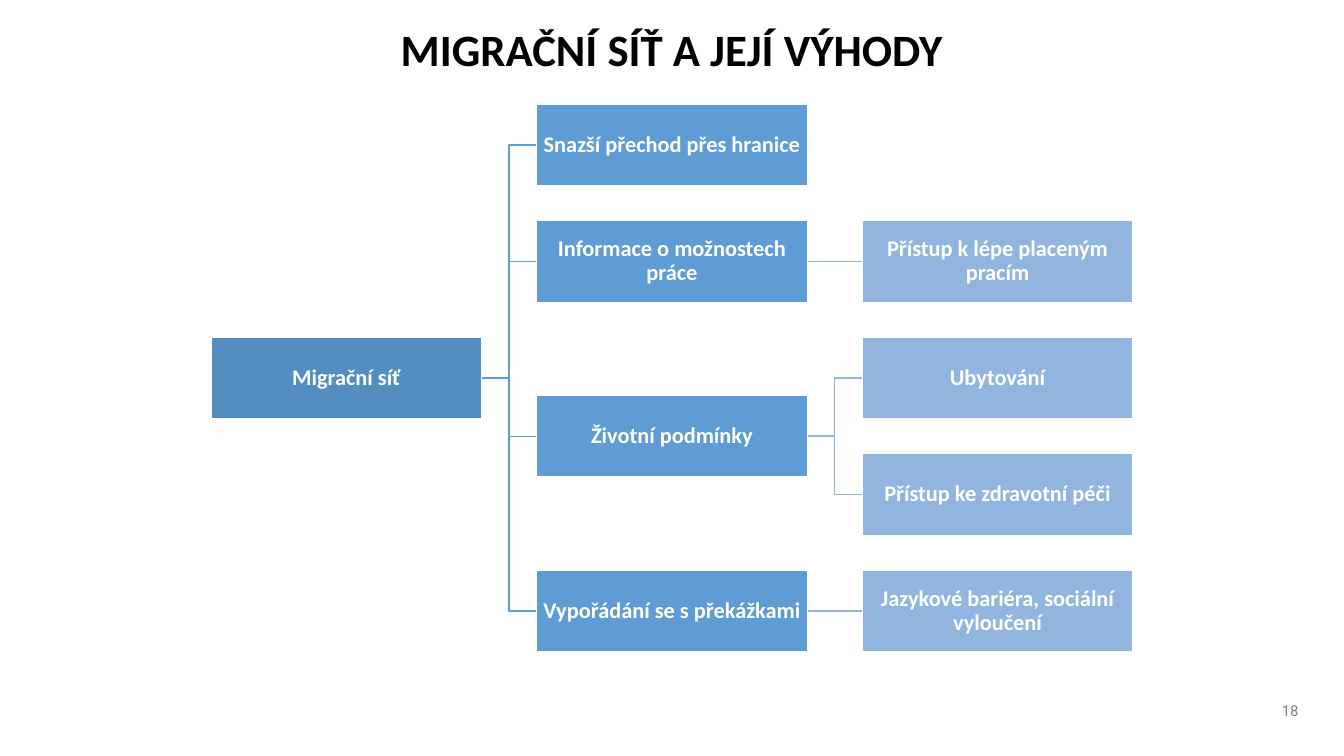
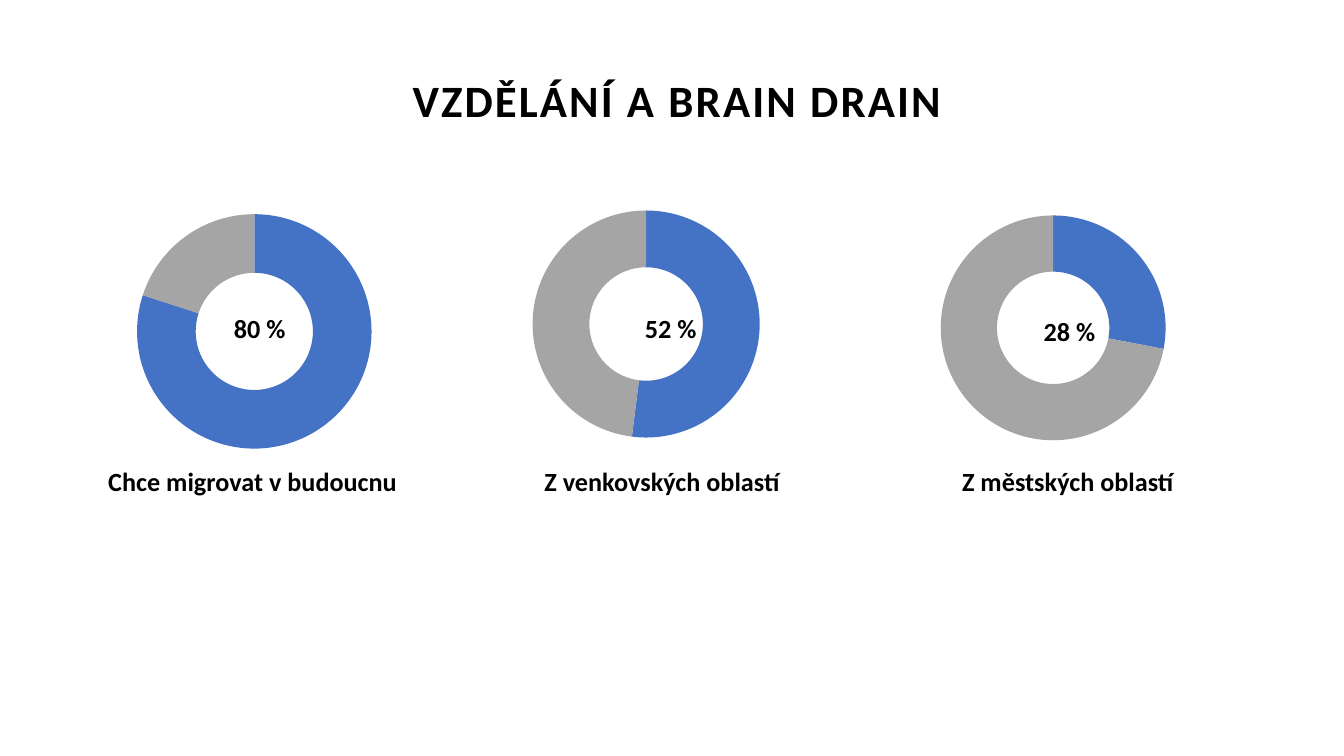
import collections

import lxml.etree
import pptx
import pptx.chart.data
import pptx.dml.color
import pptx.enum.chart
import pptx.enum.shapes
import pptx.enum.text
import pptx.oxml
import pptx.oxml.ns
import pptx.util

RGBColor = pptx.dml.color.RGBColor
BLACK = RGBColor(0x00, 0x00, 0x00)
WHITE = RGBColor(0xFF, 0xFF, 0xFF)
PAGE_GRAY = RGBColor(0x80, 0x80, 0x80)
ROOT_BLUE = RGBColor(0x53, 0x8D, 0xC1)
BRANCH_BLUE = RGBColor(0x5F, 0x9C, 0xD5)
LEAF_BLUE = RGBColor(0x91, 0xB5, 0xDE)
SHARE_BLUE = RGBColor(0x44, 0x72, 0xC4)
REST_GRAY = RGBColor(0xA5, 0xA5, 0xA5)

FONT = "Calibri"
NUMBER_FONT = "Roboto"
SHAPES = pptx.enum.shapes.MSO_SHAPE
CONNECTORS = pptx.enum.shapes.MSO_CONNECTOR
MIDDLE = pptx.enum.text.MSO_ANCHOR.MIDDLE
TOP = pptx.enum.text.MSO_ANCHOR.TOP
LEFT_SIDE, RIGHT_SIDE = 1, 3

Box = collections.namedtuple("Box", "left top width height")
Panel = collections.namedtuple("Panel", "percent caption chart plot label caption_box")

SLIDE = Box(0, 0, 13.33, 7.5)
TREE = Box(2.09, 1.03, 9.15, 5.44)
PANELS = Box(0.87, 1.66, 11.46, 3.32)
PANEL_GAP = 0.51

# Tree nodes: text, column, row, index of the parent
NODES = [
    ("Migrační síť", 0, 2, None),
    ("Snazší přechod přes hranice", 1, 0, 0),
    ("Informace o možnostech práce", 1, 1, 0),
    ("Životní podmínky", 1, 2.5, 0),
    ("Vypořádání se s překážkami", 1, 4, 0),
    ("Přístup k lépe placeným pracím", 2, 1, 2),
    ("Ubytování", 2, 2, 3),
    ("Přístup ke zdravotní péči", 2, 3, 3),
    ("Jazykové bariéra, sociální vyloučení", 2, 4, 4),
]
COLUMN_COLORS = [ROOT_BLUE, BRANCH_BLUE, LEAF_BLUE]

# Chart, label and caption are shares of the panel; plot is a share of the chart
PANEL_DATA = [
    Panel(80, "Chce migrovat v budoucnu", (0.10, 0.04, 0.75, 0.91),
          (0.05, 0.11, 0.90, 0.77), (0.31, 0.34, 0.36, 0.28), (0, 0.89, 0.94, 0.11)),
    Panel(52, "Z venkovských oblastí", (0.02, 0.04, 0.78, 0.84),
          (0.13, 0.08, 0.83, 0.86), (0.30, 0.34, 0.43, 0.28), (-0.01, 0.89, 1, 0.11)),
    Panel(28, "Z městských oblastí", (0.09, 0, 0.76, 0.96),
          (0.06, 0.15, 0.85, 0.70), (0.32, 0.35, 0.37, 0.28), (0, 0.89, 1, 0.11)),
]


def inside(box, left, top, width, height):
    """Return the part of a box that the shares describe."""
    return Box(box.left + left * box.width, box.top + top * box.height,
               width * box.width, height * box.height)


def inches(box):
    return [pptx.util.Inches(length) for length in box]


def write_text(shape, text, size=16, color=BLACK, bold=True, font=FONT, anchor=MIDDLE,
               margin=0, line_spacing=None, space_before=None, tracking=None):
    frame = shape.text_frame
    frame.word_wrap = True
    frame.vertical_anchor = anchor
    frame.margin_left = frame.margin_right = pptx.util.Inches(margin)
    frame.margin_top = frame.margin_bottom = pptx.util.Inches(margin)
    paragraph = frame.paragraphs[0]
    paragraph.alignment = pptx.enum.text.PP_ALIGN.CENTER
    if line_spacing:
        paragraph.line_spacing = line_spacing
    if space_before:
        paragraph.space_before = pptx.util.Pt(space_before)
    run = paragraph.add_run()
    run.text = text
    run.font.name = font
    run.font.size = pptx.util.Pt(size)
    run.font.bold = bold
    run.font.color.rgb = color
    if tracking:
        run.font._element.set("spc", str(int(tracking * 100)))


def add_text(slide, box, text, **text_format):
    write_text(slide.shapes.add_textbox(*inches(box)), text, **text_format)


def add_box(slide, kind, box, fill=None, outline=None):
    shape = slide.shapes.add_shape(kind, *inches(box))
    shape.shadow.inherit = False
    if fill is None:
        shape.fill.background()
    else:
        shape.fill.solid()
        shape.fill.fore_color.rgb = fill
    if outline is None:
        shape.line.fill.background()
    else:
        shape.line.color.rgb = outline
        shape.line.width = pptx.util.Pt(1.5)
    return shape


def add_title(slide, text, left, top, tracking=None):
    add_text(slide, Box(left, top, 11.93, 0.33), text, size=32, anchor=TOP,
             line_spacing=0.9, space_before=10, tracking=tracking)


def add_page_number(slide, number):
    add_text(slide, inside(SLIDE, 0.94, 0.91, 0.04, 0.06), str(number),
             size=10.7, bold=False, font=NUMBER_FONT, color=PAGE_GRAY)


def join(slide, parent, child, color):
    level = abs(parent.top - child.top) < pptx.util.Pt(1)
    kind = CONNECTORS.STRAIGHT if level else CONNECTORS.ELBOW
    connector = slide.shapes.add_connector(kind, 0, 0, 0, 0)
    connector.begin_connect(parent, RIGHT_SIDE)
    connector.end_connect(child, LEFT_SIDE)
    connector.line.color.rgb = color
    connector.line.width = pptx.util.Pt(1)
    lxml.etree.SubElement(connector._element.spPr, pptx.oxml.ns.qn("a:effectLst"))


def add_tree(slide, box):
    # Three boxes of five units with one-unit gaps; five rows of leaves
    unit = box.width / 17
    node_height = 0.15 * box.height
    row_pitch = (box.height - node_height) / 4
    shapes = []
    for text, column, row, parent in NODES:
        color = COLUMN_COLORS[column]
        node_box = Box(box.left + 6 * unit * column, box.top + row_pitch * row,
                       5 * unit, node_height)
        shape = add_box(slide, SHAPES.RECTANGLE, node_box, color, WHITE)
        write_text(shape, text, color=WHITE, margin=0.01, line_spacing=0.9)
        if parent is not None:
            join(slide, shapes[parent], shape, color)
        shapes.append(shape)


def set_plot_layout(chart, plot_box):
    plot_area = chart._chartSpace.chart.plotArea
    for layout in plot_area.findall(pptx.oxml.ns.qn("c:layout")):
        plot_area.remove(layout)
    layout = lxml.etree.Element(pptx.oxml.ns.qn("c:layout"))
    manual = lxml.etree.SubElement(layout, pptx.oxml.ns.qn("c:manualLayout"))
    settings = [("layoutTarget", "inner"), ("xMode", "edge"), ("yMode", "edge")]
    settings += zip("xywh", plot_box)
    for name, value in settings:
        lxml.etree.SubElement(manual, pptx.oxml.ns.qn("c:" + name)).set("val", str(value))
    plot_area.insert(0, layout)


def add_doughnut(slide, box, percent, plot_box):
    data = pptx.chart.data.CategoryChartData()
    data.categories = ["1", "2"]
    data.add_series("Series 1", [percent, 100 - percent])
    chart = slide.shapes.add_chart(pptx.enum.chart.XL_CHART_TYPE.DOUGHNUT,
                                   *inches(box), data).chart
    chart.has_title = False
    chart.has_legend = False
    chart.font.name = FONT
    chart.font.size = pptx.util.Pt(18)
    chart.font.color.rgb = BLACK
    plot = chart.plots[0]
    plot.has_data_labels = False
    for index, color in enumerate([SHARE_BLUE, REST_GRAY]):
        point_format = plot.series[0].points[index].format
        point_format.fill.solid()
        point_format.fill.fore_color.rgb = color
        point_format.line.fill.background()
    for hole in plot._element.findall(pptx.oxml.ns.qn("c:holeSize")):
        hole.set("val", "64")
    set_plot_layout(chart, plot_box)


def add_panel(slide, box, panel):
    add_doughnut(slide, inside(box, *panel.chart), panel.percent, panel.plot)
    label = add_box(slide, SHAPES.OVAL, inside(box, *panel.label))
    write_text(label, f"{panel.percent} %", size=18.7)
    add_text(slide, inside(box, *panel.caption_box), panel.caption, size=18.7, anchor=TOP)


def add_panels(slide, box):
    count = len(PANEL_DATA)
    width = (box.width - PANEL_GAP * (count - 1)) / count
    for index, panel in enumerate(PANEL_DATA):
        left = box.left + index * (width + PANEL_GAP)
        add_panel(slide, Box(left, box.top, width, box.height), panel)


def main():
    presentation = pptx.Presentation()
    presentation.slide_width = pptx.util.Inches(SLIDE.width)
    presentation.slide_height = pptx.util.Inches(SLIDE.height)
    blank = presentation.slide_layouts[6]

    # Advantages of the migration network
    slide = presentation.slides.add_slide(blank)
    add_page_number(slide, 18)
    add_tree(slide, TREE)
    add_title(slide, "MIGRAČNÍ SÍŤ A JEJÍ VÝHODY", 0.7, 0.28)

    # Education and brain drain
    slide = presentation.slides.add_slide(blank)
    add_title(slide, "VZDĚLÁNÍ A BRAIN DRAIN", 0.75, 0.78, tracking=1.5)
    add_panels(slide, PANELS)

    presentation.save("out.pptx")


if __name__ == "__main__":
    main()
